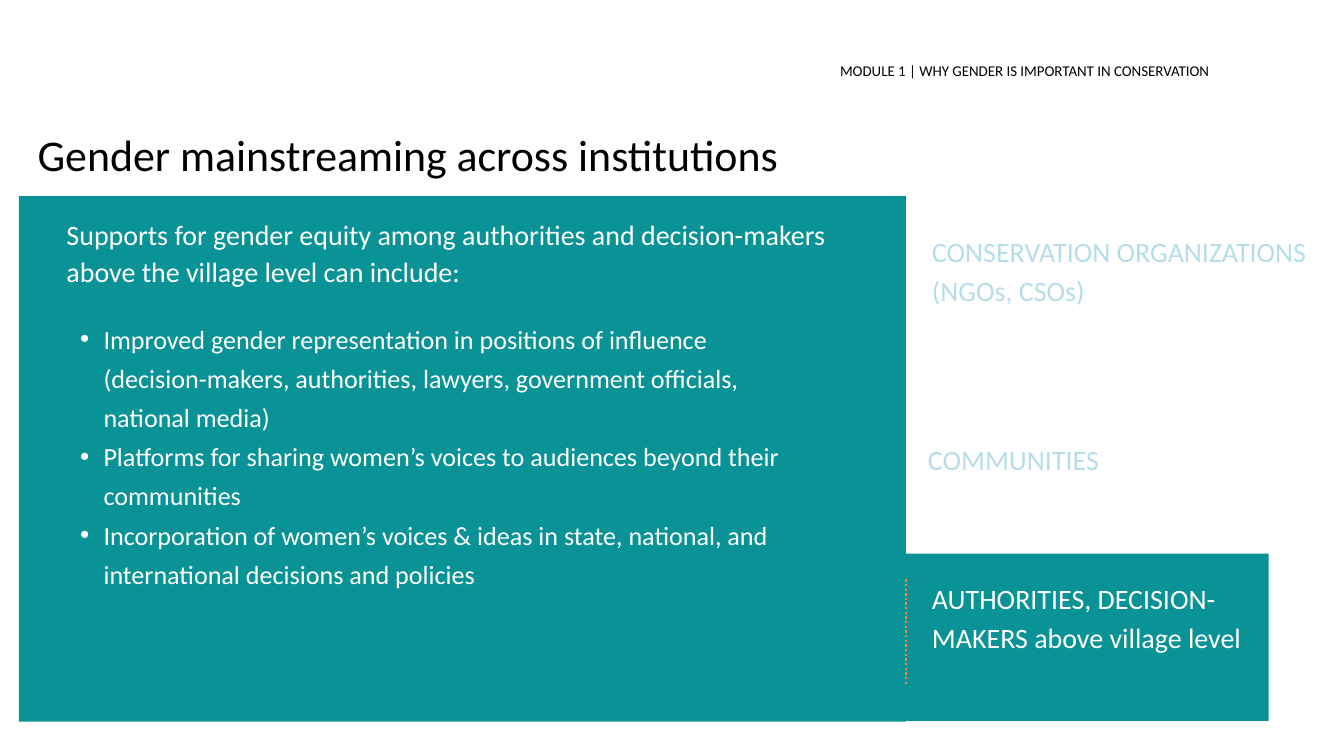
import pptx
import pptx.dml.color
import pptx.enum.dml
import pptx.enum.shapes
import pptx.oxml.ns
import pptx.oxml.xmlchemy
import pptx.util
from lxml import etree

Pt = pptx.util.Pt
qn = pptx.oxml.ns.qn
COLORS = {"teal": "0A9396", "pale": "B7DEE8", "orange": "F9844A",
          "white": "FFFFFF", "black": "000000"}


def rgb(name):
    return pptx.dml.color.RGBColor.from_string(COLORS[name])


def add_text(box, lines, size, color, spacing, margins=(0, 0), indent=None, bullet=None):
    text_frame = slide.shapes.add_textbox(*map(Pt, box)).text_frame
    text_frame.word_wrap = True
    text_frame.margin_left = text_frame.margin_right = Pt(margins[0])
    text_frame.margin_top = text_frame.margin_bottom = Pt(margins[1])
    text_frame.text = "\n".join(lines)
    for paragraph in text_frame.paragraphs:
        paragraph.line_spacing = Pt(spacing)
        properties = paragraph._p.get_or_add_pPr()
        if indent:
            properties.set("marL", str(Pt(indent[0])))
            properties.set("indent", str(Pt(indent[1])))
        if bullet:
            etree.SubElement(properties, qn("a:buFont"), typeface="Arial")
            etree.SubElement(properties, qn("a:buChar"), char=bullet)
        for run in paragraph.runs:
            run.font.name = "Calibri"
            run.font.size = Pt(size)
            run.font.color.rgb = rgb(color)


presentation = pptx.Presentation()
presentation.slide_width = Pt(1440)
presentation.slide_height = Pt(810)
slide = presentation.slides.add_slide(presentation.slide_layouts[6])

# Teal panels: highlighted tab, then main panel
for box in [(557.3, 593.3, 802, 179.2), (20.2, 210.2, 950.4, 563)]:
    panel = slide.shapes.add_shape(
        pptx.enum.shapes.MSO_SHAPE.RECTANGLE, *map(Pt, box))
    panel.shadow.inherit = False
    panel.fill.solid()
    panel.fill.fore_color.rgb = rgb("teal")
    panel.line.fill.background()

# Title and module header
add_text((40.3, 136.8, 1055.5, 55.4),
         ["Gender mainstreaming across institutions"], 47, "black", 56.4)
add_text((900, 62.6, 517.7, 21.6),
         ["MODULE 1 | WHY GENDER IS IMPORTANT IN CONSERVATION"], 16, "black", 22.4)

# Main panel: introduction and bullets
add_text((40.3, 226.8, 871.9, 85),
         ["Supports for gender equity among authorities and decision-makers "
          "above the village level can include:"],
         30, "white", 39.2, margins=(7.2, 3.6), indent=(23.8, 0))
add_text((59.8, 337.7, 800.6, 294.5),
         ["Improved gender representation in positions of influence "
          "(decision-makers, authorities, lawyers, government officials, national media)",
          "Platforms for sharing women’s voices to audiences beyond their communities",
          "Incorporation of women’s voices & ideas in state, national, "
          "and international decisions and policies"],
         28, "white", 42, indent=(51.1, -25.2), bullet="•")

# Institution labels
labels = [
    ((998.6, 245.5, 441.4, 125.3), ["CONSERVATION ORGANIZATIONS", "(NGOs, CSOs)"], "pale"),
    ((994.3, 468, 360, 41), ["COMMUNITIES"], "pale"),
    ((998.6, 617, 360, 125.3), ["AUTHORITIES, DECISION-MAKERS above village level"], "white"),
]
for box, lines, color in labels:
    add_text(box, lines, 30, color, 42)

# Dotted divider beside the highlighted tab
divider = slide.shapes.add_connector(
    pptx.enum.shapes.MSO_CONNECTOR.STRAIGHT, Pt(970.6), Pt(620.6), Pt(970.6), Pt(734.4))
divider.line.color.rgb = rgb("orange")
divider.line.width = Pt(2.5)
divider.line.dash_style = pptx.enum.dml.MSO_LINE.ROUND_DOT
etree.SubElement(divider._element.spPr, qn("a:effectLst"))

presentation.save("out.pptx")
